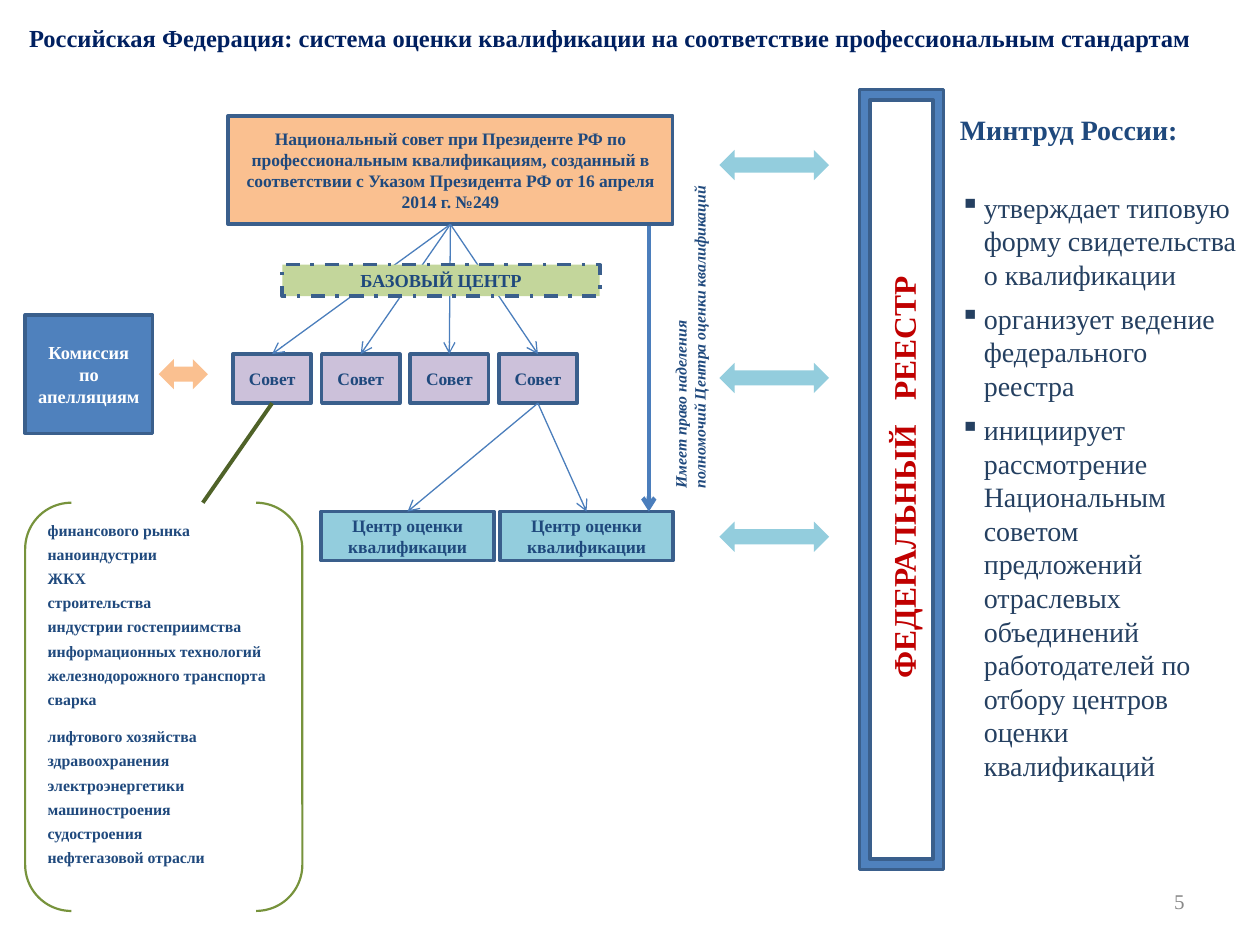
from pptx import Presentation
from pptx.dml.color import RGBColor
from pptx.enum.dml import MSO_LINE
from pptx.enum.shapes import MSO_CONNECTOR, MSO_SHAPE
from pptx.enum.text import MSO_ANCHOR, PP_ALIGN
from pptx.oxml.ns import qn
from pptx.util import Inches, Pt
from lxml import etree

RECTANGLE = MSO_SHAPE.RECTANGLE
DOUBLE_ARROW = MSO_SHAPE.LEFT_RIGHT_ARROW
BRACKETS = MSO_SHAPE.DOUBLE_BRACKET
FRAME = MSO_SHAPE.FRAME
STRAIGHT = MSO_CONNECTOR.STRAIGHT
DASH_DOT = MSO_LINE.DASH_DOT
LEFT, CENTER, RIGHT = PP_ALIGN.LEFT, PP_ALIGN.CENTER, PP_ALIGN.RIGHT
TOP, MIDDLE = MSO_ANCHOR.TOP, MSO_ANCHOR.MIDDLE

FONT = "Times New Roman"
NAVY, BLUE, OUTLINE, LINK = "1F497D", "4F81BD", "3A5F8C", "4B7EBC"
PEACH, LILAC, AQUA, LIME = "FAC090", "CCC1DA", "93CDDD", "C3D69B"
TOP_SITE, BOTTOM_SITE = 0, 2


def color(hex_string):
    return RGBColor.from_string(hex_string)


def write(shape, *texts, size=10, hex_color=NAVY, bold=True, italic=False,
          align=LEFT, anchor=TOP, before=0, after=0):
    """Fill a shape with one paragraph per text and return the paragraphs."""
    frame = shape.text_frame
    frame.word_wrap = True
    frame.vertical_anchor = anchor
    paragraphs = []
    for index, text in enumerate(texts):
        paragraph = frame.add_paragraph() if index else frame.paragraphs[0]
        paragraph.alignment = align
        paragraph.space_before = Pt(before if index else 0)
        paragraph.space_after = Pt(after)
        run = paragraph.add_run()
        run.text = text
        run.font.name = FONT
        run.font.size = Pt(size)
        run.font.bold = bold
        run.font.italic = italic
        run.font.color.rgb = color(hex_color)
        paragraphs.append(paragraph)
    return paragraphs


def add_text(slide, box, *texts, rotation=0, **text_format):
    shape = slide.shapes.add_textbox(*map(Inches, box))
    shape.rotation = rotation
    return write(shape, *texts, **text_format)


def add_figure(slide, kind, box, fill=None, line=OUTLINE, width=2):
    shape = slide.shapes.add_shape(kind, *map(Inches, box))
    shape.shadow.inherit = False
    if fill:
        shape.fill.solid()
        shape.fill.fore_color.rgb = color(fill)
    else:
        shape.fill.background()
    if line:
        shape.line.color.rgb = color(line)
        shape.line.width = Pt(width)
    else:
        shape.line.fill.background()
    return shape


def add_block(slide, box, text, fill, **text_format):
    shape = add_figure(slide, RECTANGLE, box, fill)
    write(shape, text, align=CENTER, anchor=MIDDLE, **text_format)
    return shape


def add_line(slide, start, end, hex_color=LINK, width=0.75, arrow=True):
    line = slide.shapes.add_connector(STRAIGHT, *map(Inches, (*start, *end)))
    line.line.color.rgb = color(hex_color)
    line.line.width = Pt(width)
    if arrow:
        outline = line.line._get_or_add_ln()
        etree.SubElement(outline, qn("a:tailEnd"), type="arrow")
    etree.SubElement(line._element.spPr, qn("a:effectLst"))
    return line


def link_down(slide, upper, lower):
    line = add_line(slide, (0, 0), (1, 1))
    line.begin_connect(upper, BOTTOM_SITE)
    line.end_connect(lower, TOP_SITE)


def add_title(slide, box, text):
    title = slide.shapes.title
    title.left, title.top, title.width, title.height = map(Inches, box)
    write(title, text, size=14, hex_color="002060", align=CENTER, anchor=MIDDLE)


def add_hierarchy(slide, box):
    """National council, base centre, councils and assessment centres."""
    left, top, width, height = box
    national = add_block(
        slide, (left, top, width, 0.86),
        "Национальный совет при Президенте РФ по профессиональным "
        "квалификациям, созданный в соответствии с Указом Президента РФ "
        "от 16 апреля 2014 г. №249", PEACH)

    row_height = 0.39
    councils = [
        add_block(slide, (left + 0.04 + 0.703 * column, top + 1.89, 0.62, row_height),
                  "Совет", LILAC)
        for column in range(4)]
    for council in councils:
        link_down(slide, national, council)
    base = add_block(slide, (left + 0.43, top + 1.18, 2.52, 0.25),
                     "БАЗОВЫЙ ЦЕНТР", LIME, size=10.5)
    base.line.dash_style = DASH_DOT

    center_width = 1.37
    right = left + width
    center_top = top + height - row_height
    for center_left in (right - 2 * center_width - 0.05, right - center_width):
        center = add_block(slide, (center_left, center_top, center_width, row_height),
                           "Центр оценки квалификации", AQUA)
        link_down(slide, councils[-1], center)

    bypass = right - 0.19
    add_line(slide, (bypass, top + 0.87), (bypass, center_top), width=2.5)
    add_text(slide, (left + 2.33, top + 1.52, 2.67, 0.4),
             "Имеет право наделения", "полномочий Центра оценки квалификаций",
             rotation=270, size=9, italic=True)


def add_appeals(slide, box):
    left, top, width, height = box
    add_block(slide, (left, top, 1.01, height), "Комиссия по апелляциям", BLUE,
              size=10.5, hex_color="FFFFFF")
    add_figure(slide, DOUBLE_ARROW, (left + width - 0.39, top + 0.35, 0.39, 0.24),
               PEACH, line=None)


def add_sectors(slide, box):
    """Bracketed list of the councils' industries."""
    left, top, width, height = box
    add_figure(slide, BRACKETS, box, line="77933C", width=1.25)
    add_line(slide, (left + 1.96, top - 0.79), (left + 1.41, top),
             hex_color="4F6228", width=2.25, arrow=False)
    list_format = {"size": 9, "before": 3}
    add_text(slide, (left + 0.08, top + 0.09, 1.95, 1.61),
             "финансового рынка", "наноиндустрии", "ЖКХ", "строительства",
             "индустрии гостеприимства", "информационных технологий",
             "железнодорожного транспорта", "сварка", **list_format)
    add_text(slide, (left + 0.08, top + 1.73, 2.02, 1.22),
             "лифтового хозяйства", "здравоохранения", "электроэнергетики",
             "машиностроения", "судостроения", "нефтегазовой отрасли",
             **list_format)


def add_registry(slide, box):
    """Federal registry frame with the exchange arrows on its left."""
    left, top, width, height = box
    add_figure(slide, FRAME, box, BLUE)
    label, = add_text(slide, (left - 1.66, top + 2.56, 4.02, 0.4),
                      "ФЕДЕРАЛЬНЫЙ\tРЕЕСТР", rotation=270, size=18,
                      hex_color="C00000")
    tabs = etree.SubElement(label._p.get_or_add_pPr(), qn("a:tabLst"))
    etree.SubElement(tabs, qn("a:tab"), pos=str(Inches(2.2)), algn="l")
    for offset in (0.48, 2.17, 3.43):
        add_figure(slide, DOUBLE_ARROW, (left - 1.11, top + offset, 0.87, 0.24),
                   AQUA, line=None)


def add_ministry(slide, box):
    left, top, width, height = box
    heading_height = 0.72
    add_text(slide, (left, top, width, heading_height), "Минтруд России:", size=16)
    duties = add_text(
        slide, (left, top + 0.62, width, height - 0.62),
        "утверждает типовую форму свидетельства о квалификации",
        "организует ведение федерального реестра",
        "инициирует рассмотрение Национальным советом предложений отраслевых "
        "объединений работодателей по отбору центров оценки квалификаций",
        size=16, hex_color="254061", bold=False, after=6)
    for duty in duties:
        properties = duty._p.get_or_add_pPr()
        properties.set("marL", str(Inches(0.19)))
        properties.set("indent", str(-Inches(0.19)))
        etree.SubElement(properties, qn("a:buChar"), char="▪")


def main():
    presentation = Presentation()
    presentation.slide_width = Inches(10)
    presentation.slide_height = Inches(7.5)
    slide = presentation.slides.add_slide(presentation.slide_layouts[5])
    add_title(slide, (0.12, 0.13, 9.45, 0.34),
              "Российская Федерация: система оценки квалификации "
              "на соответствие профессиональным стандартам")
    add_hierarchy(slide, (1.81, 0.92, 3.53, 3.53))
    add_appeals(slide, (0.2, 2.5, 1.45, 0.94))
    add_sectors(slide, (0.2, 3.99, 2.2, 3.24))
    add_registry(slide, (6.82, 0.71, 0.67, 6.19))
    add_ministry(slide, (7.52, 0.84, 2.44, 5.47))
    add_text(slide, (7.17, 6.95, 2.33, 0.4), "5", size=12, hex_color="898989",
             bold=False, align=RIGHT, anchor=MIDDLE)
    presentation.save("out.pptx")


if __name__ == "__main__":
    main()
